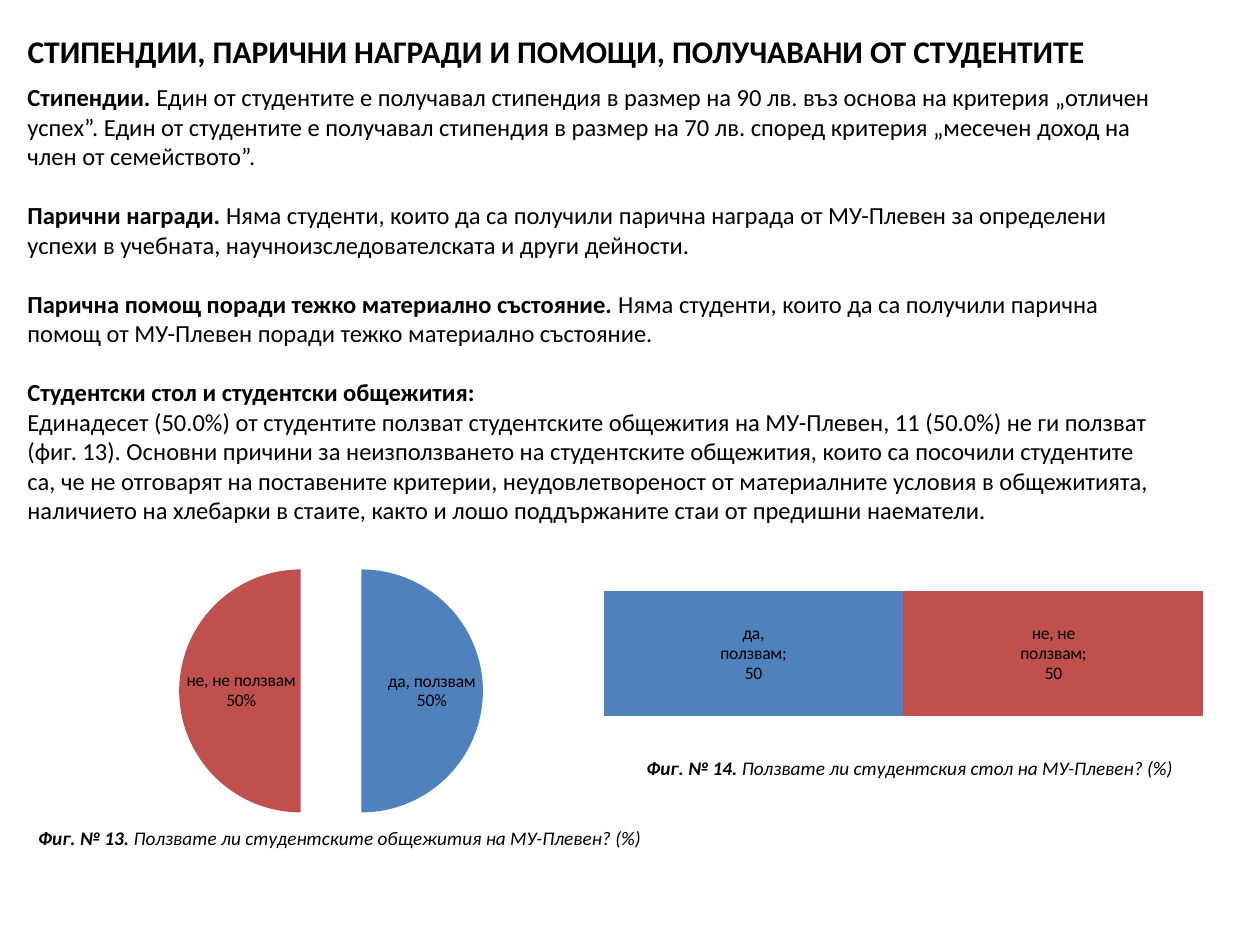
from lxml.etree import SubElement
from pptx import Presentation
from pptx.chart.data import CategoryChartData
from pptx.dml.color import RGBColor
from pptx.enum.chart import XL_CHART_TYPE, XL_LABEL_POSITION
from pptx.enum.text import MSO_ANCHOR, PP_ALIGN
from pptx.oxml.ns import qn
from pptx.util import Emu, Pt

PX = 914400 / 126
THEME = {
    "font": "Calibri",
    "text": RGBColor(0, 0, 0),
    "yes": RGBColor(0x4F, 0x81, 0xBD),
    "no": RGBColor(0xC0, 0x50, 0x4D),
    "title": Pt(18), "body": Pt(14), "caption": Pt(11), "label": Pt(10),
    "gap": Pt(17),
}
ANSWERS = ["да, ползвам", "не, не ползвам"]
SHARES = [50, 50]


def add_runs(paragraph, parts, size, italic=False):
    """Add (text, bold) parts to a paragraph as formatted runs."""
    for text, bold in parts:
        run = paragraph.add_run()
        run.text = text
        run.font.name, run.font.size = THEME["font"], size
        run.font.bold, run.font.italic = bold, italic
        run.font.color.rgb = THEME["text"]


def style_chart(chart, plot_box, separator):
    """Set chart text, inner plot box (x, y, w, h fractions) and label separator."""
    chart.has_title = chart.has_legend = False
    chart.font.name, chart.font.size = THEME["font"], THEME["label"]
    chart.font.color.rgb = THEME["text"]
    plot_area = chart._chartSpace.chart.plotArea
    for old in plot_area.findall(qn("c:layout")):
        plot_area.remove(old)
    layout = SubElement(plot_area, qn("c:layout"))
    plot_area.insert(0, layout)
    manual = SubElement(layout, qn("c:manualLayout"))
    settings = [("layoutTarget", "inner"), ("xMode", "edge"), ("yMode", "edge")]
    for tag, value in settings + list(zip("xywh", plot_box)):
        SubElement(manual, qn(f"c:{tag}")).set("val", str(value))
    for bubble in list(plot_area.iter(qn("c:showBubbleSize"))):
        mark = SubElement(bubble.getparent(), qn("c:separator"))
        mark.text = separator
        bubble.addnext(mark)


prs = Presentation()
prs.slide_width, prs.slide_height = Emu(int(1260 * PX)), Emu(int(945 * PX))
slide = prs.slides.add_slide(prs.slide_layouts[5])

# Title
title = slide.shapes.title
title.left, title.top, title.width, title.height = [
    Emu(int(v * PX)) for v in (15, 16, 1221, 69)]
title.text_frame.vertical_anchor = MSO_ANCHOR.MIDDLE
heading = title.text_frame.paragraphs[0]
heading.alignment = PP_ALIGN.LEFT
add_runs(heading, [("СТИПЕНДИИ, ПАРИЧНИ НАГРАДИ И ПОМОЩИ, ПОЛУЧАВАНИ ОТ СТУДЕНТИТЕ", True)],
         THEME["title"])

# Findings: bold lead and text, spaced by one line except before the last
findings = [
    [("Стипендии.", True),
     (" Един от студентите е получавал стипендия в размер на 90 лв. въз основа на критерия "
      "„отличен успех”. Един от студентите е получавал стипендия в размер на 70 лв. според "
      "критерия „месечен доход на член от семейството”.", False)],
    [("Парични награди.", True),
     (" Няма студенти, които да са получили парична награда от МУ-Плевен за определени "
      "успехи в учебната, научноизследователската и други дейности.", False)],
    [("Парична помощ поради тежко материално състояние.", True),
     (" Няма студенти, които да са получили парична помощ от МУ-Плевен поради тежко "
      "материално състояние.", False)],
    [("Студентски стол и студентски общежития:", True)],
    [("Единадесет (50.0%) от студентите ползват студентските общежития на МУ-Плевен, "
      "11 (50.0%) не ги ползват (фиг. 13). Основни причини за неизползването на студентските "
      "общежития, които са посочили студентите са, че не отговарят на поставените критерии, "
      "неудовлетвореност от материалните условия в общежитията, наличието на хлебарки в "
      "стаите, както и лошо поддържаните стаи от предишни наематели.", False)],
]
body = slide.shapes.add_textbox(*[Emu(int(v * PX)) for v in (15, 76, 1150, 459)]).text_frame
body.word_wrap = True
for i, parts in enumerate(findings):
    finding = body.add_paragraph() if i else body.paragraphs[0]
    add_runs(finding, parts, THEME["body"])
    finding.space_after = THEME["gap"] if i < 3 else Pt(0)

# Fig. 13: exploded pie of dormitory use
dormitory_data = CategoryChartData()
dormitory_data.categories = ANSWERS
dormitory_data.add_series("Series 1", SHARES)
dormitory = slide.shapes.add_chart(
    XL_CHART_TYPE.PIE, *[Emu(int(v * PX)) for v in (18, 522, 620, 338)], dormitory_data).chart
slices = dormitory.plots[0].series[0]
for i, answer in enumerate(("yes", "no")):
    fill = slices.points[i].format.fill
    fill.solid()
    fill.fore_color.rgb = THEME[answer]
explosion = SubElement(slices._element, qn("c:explosion"))
explosion.set("val", "25")
slices._element.find(qn("c:tx")).addnext(explosion)
labels = slices.data_labels
labels.show_value = False
labels.show_category_name = labels.show_percentage = True
labels.number_format, labels.number_format_is_linked = "0%", False
labels.position = XL_LABEL_POSITION.INSIDE_END
style_chart(dormitory, (0.26, 0.05, 0.49, 0.9), "\n")

# Fig. 14: stacked bar of canteen use
canteen_data = CategoryChartData()
canteen_data.categories = ["1"]
for answer, share in zip(ANSWERS, SHARES):
    canteen_data.add_series(answer, [share])
canteen = slide.shapes.add_chart(
    XL_CHART_TYPE.BAR_STACKED_100, *[Emu(int(v * PX)) for v in (591, 527, 625, 253)],
    canteen_data).chart
canteen.plots[0].gap_width, canteen.plots[0].overlap = 95, 100
canteen.category_axis.visible = canteen.value_axis.visible = False
canteen.value_axis.has_major_gridlines = False
for series, answer in zip(canteen.plots[0].series, ("yes", "no")):
    series.format.fill.solid()
    series.format.fill.fore_color.rgb = THEME[answer]
    series.data_labels.show_value = series.data_labels.show_series_name = True
style_chart(canteen, (0.02, 0.02, 0.96, 0.96), "; ")

# Captions
for left, top, number, question in [
    (25, 820, "Фиг. № 13. ", "Ползвате ли студентските общежития на МУ-Плевен? (%)"),
    (595, 750, "Фиг. № 14. ", "Ползвате ли студентския стол на МУ-Плевен? (%)"),
]:
    frame = slide.shapes.add_textbox(
        *[Emu(int(v * PX)) for v in (left, top, 630, 37)]).text_frame
    frame.word_wrap = True
    caption = frame.paragraphs[0]
    caption.alignment = PP_ALIGN.CENTER
    add_runs(caption, [(number, True), (question, False)], THEME["caption"], italic=True)

prs.save("out.pptx")
